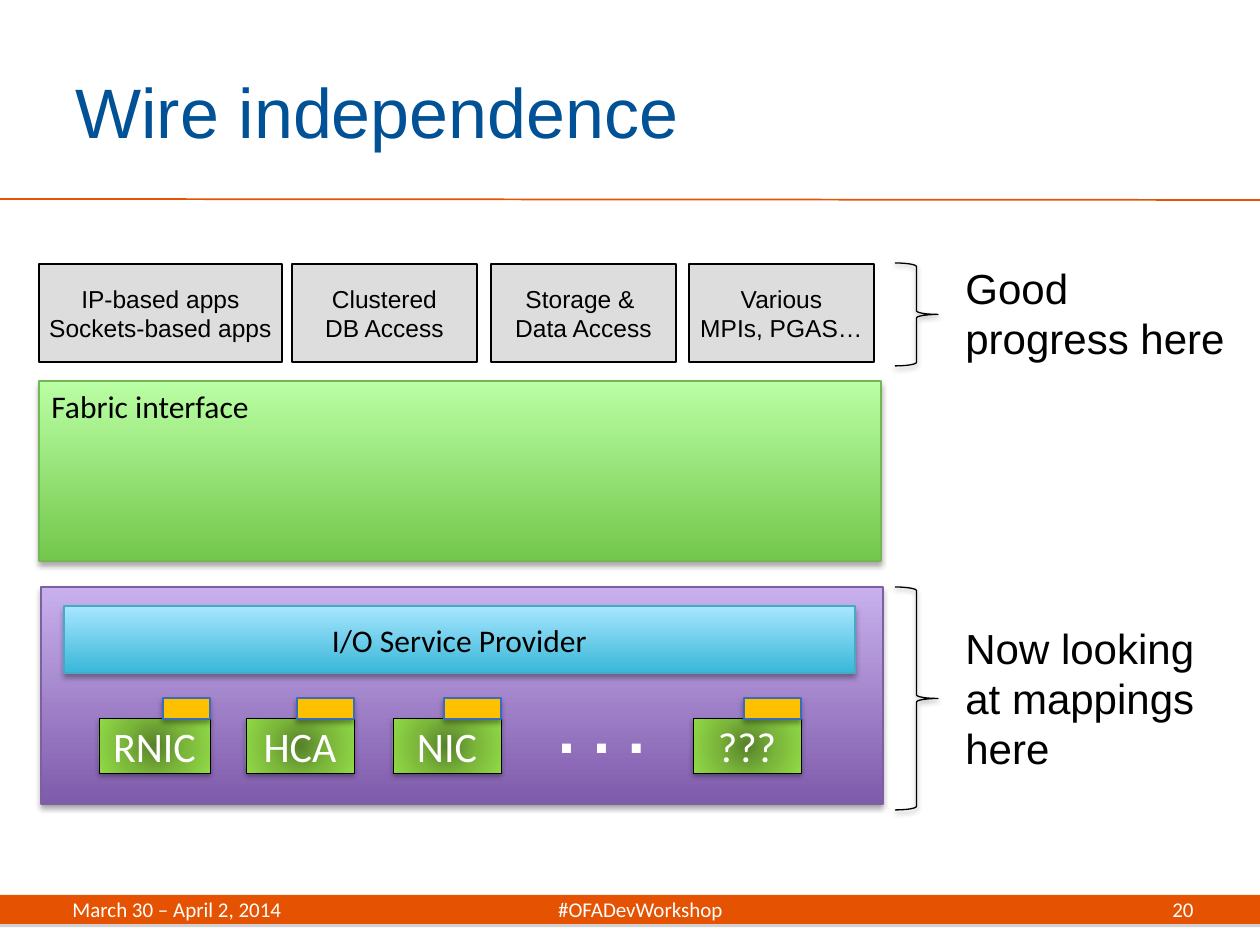
from dataclasses import dataclass

from lxml.etree import SubElement
from pptx import Presentation
from pptx.dml.color import RGBColor
from pptx.enum.shapes import MSO_CONNECTOR, MSO_SHAPE
from pptx.enum.text import MSO_ANCHOR, PP_ALIGN
from pptx.oxml.ns import qn
from pptx.util import Emu, Pt

PX_PER_INCH = 126


@dataclass(frozen=True)
class Theme:
    # Colours
    black: str = "000000"
    white: str = "FFFFFF"
    title: str = "005195"
    orange: str = "E55302"
    footer_shadow: str = "808080"
    app: str = "DDDDDD"
    port: str = "FFC000"
    port_line: str = "386CBC"
    fabric: tuple = ("73C74B", "BAFFA4")
    fabric_line: str = "75B755"
    provider: tuple = ("7F5BAB", "C8B0ED")
    provider_line: str = "7D60A0"
    service: tuple = ("39B7D8", "A7E6FF")
    service_line: str = "46AAC5"
    adapter: tuple = ("57812A", "7BB73B", "92DA46")
    # Fonts and type sizes
    heading_font: str = "Arial"
    label_font: str = "Calibri"
    title_size: int = 40
    dots_size: int = 36
    note_size: int = 24
    label_size: int = 18
    app_size: int = 14
    footer_size: int = 12


def px(value):
    return Emu(round(value * 914400 / PX_PER_INCH))


def rgb(value):
    return RGBColor.from_string(value)


def write_text(shape, text, *, size, color, font, bold=False, wrap=True,
               align=PP_ALIGN.LEFT, anchor=MSO_ANCHOR.TOP, center_tab=None):
    frame = shape.text_frame
    frame.word_wrap = wrap
    frame.vertical_anchor = anchor
    for index, line in enumerate(text.split("\n")):
        paragraph = frame.add_paragraph() if index else frame.paragraphs[0]
        paragraph.alignment = align
        if center_tab is not None:
            tabs = SubElement(paragraph._p.get_or_add_pPr(), qn("a:tabLst"))
            SubElement(tabs, qn("a:tab"), pos=str(px(center_tab)), algn="ctr")
        run = paragraph.add_run()
        run.text = line
        run.font.name = font
        run.font.size = Pt(size)
        run.font.bold = bold
        run.font.color.rgb = rgb(color)


def fill_gradient(shape, colors, radial):
    """Spread the colours evenly, from the bottom up or from the centre out."""
    shape.fill.gradient()
    gradient = shape.element.spPr.find(qn("a:gradFill"))
    for child in list(gradient):
        gradient.remove(child)
    stops = SubElement(gradient, qn("a:gsLst"))
    for index, color in enumerate(colors):
        position = 100000 * index // (len(colors) - 1)
        stop = SubElement(stops, qn("a:gs"), pos=str(position))
        SubElement(stop, qn("a:srgbClr"), val=color)
    if radial:
        direction = SubElement(gradient, qn("a:path"), path="circle")
        SubElement(direction, qn("a:fillToRect"), l="50000", t="50000", r="50000", b="50000")
    else:
        SubElement(gradient, qn("a:lin"), ang="16200000", scaled="0")


def add_shadow(shape, color, blur=3.1, distance=1.8, opacity=35):
    effects = shape.element.spPr.find(qn("a:effectLst"))
    shadow = SubElement(effects, qn("a:outerShdw"), blurRad=str(Pt(blur)),
                        dist=str(Pt(distance)), dir="5400000", rotWithShape="0")
    shade = SubElement(shadow, qn("a:srgbClr"), val=color)
    SubElement(shade, qn("a:alpha"), val=str(opacity * 1000))


class SlideBuilder:
    def __init__(self, slide, theme):
        self.slide = slide
        self.theme = theme

    def shape(self, left, top, width, height, *, fill=None, line=None, weight=0.75,
              radial=False, kind=MSO_SHAPE.RECTANGLE, parent=None):
        shapes = (parent or self.slide).shapes
        shape = shapes.add_shape(kind, px(left), px(top), px(width), px(height))
        shape.shadow.inherit = False
        if fill is None:
            shape.fill.background()
        elif isinstance(fill, tuple):
            fill_gradient(shape, fill, radial)
        else:
            shape.fill.solid()
            shape.fill.fore_color.rgb = rgb(fill)
        if line is None:
            shape.line.fill.background()
        else:
            shape.line.color.rgb = rgb(line)
            shape.line.width = Pt(weight)
        return shape

    def panel(self, *box, **style):
        shape = self.shape(*box, **style)
        add_shadow(shape, self.theme.black)
        return shape

    def text(self, text, left, top, width, height, **style):
        box = self.slide.shapes.add_textbox(px(left), px(top), px(width), px(height))
        write_text(box, text, **style)

    def rule(self, start_x, start_y, end_x, end_y):
        line = self.slide.shapes.add_connector(
            MSO_CONNECTOR.STRAIGHT, px(start_x), px(start_y), px(end_x), px(end_y))
        line.line.color.rgb = rgb(self.theme.orange)
        line.line.width = Pt(1)
        SubElement(line.element.spPr, qn("a:effectLst"))

    def app(self, text, left, width):
        box = self.shape(left, 264, width, 98, fill=self.theme.app, line=self.theme.black)
        write_text(box, text, size=self.theme.app_size, color=self.theme.black,
                   font=self.theme.heading_font, wrap=False,
                   align=PP_ALIGN.CENTER, anchor=MSO_ANCHOR.MIDDLE)

    def brace_note(self, text, brace_top, brace_height, text_top, text_height):
        brace = self.shape(895, brace_top, 43, brace_height, line=self.theme.black,
                           kind=MSO_SHAPE.RIGHT_BRACE)
        add_shadow(brace, self.theme.black, distance=1.6, opacity=38)
        self.text(text, 953, text_top, 286, text_height, size=self.theme.note_size,
                  color=self.theme.black, font=self.theme.heading_font)

    def adapter(self, text, left, width, port_width):
        group = self.slide.shapes.add_group_shape()
        card = self.panel(left, 718, width, 55, fill=self.theme.adapter, radial=True,
                          line=self.theme.black, weight=0.25, parent=group)
        write_text(card, text, size=self.theme.note_size, color=self.theme.white,
                   font=self.theme.label_font, align=PP_ALIGN.CENTER,
                   anchor=MSO_ANCHOR.MIDDLE)
        self.panel(left + width - port_width, 698, port_width, 21, fill=self.theme.port,
                   line=self.theme.port_line, parent=group)


def main():
    presentation = Presentation()
    presentation.slide_width = px(1260)
    presentation.slide_height = px(945)
    theme = Theme()
    builder = SlideBuilder(presentation.slides.add_slide(presentation.slide_layouts[6]), theme)

    # Footer bar, title and rule
    footer = builder.shape(0, 895, 1260, 29, fill=theme.orange)
    add_shadow(footer, theme.footer_shadow, blur=0)
    builder.rule(0, 199, 1260, 200)
    builder.text("Wire independence", 63, 32, 1029, 157, size=theme.title_size,
                 color=theme.title, font=theme.heading_font, anchor=MSO_ANCHOR.MIDDLE)

    # Applications
    for text, left, width in (("IP-based apps\nSockets-based apps", 39, 243),
                              ("Clustered\nDB Access", 292, 185),
                              ("Storage & \nData Access", 491, 185),
                              ("Various\nMPIs, PGAS…", 689, 185)):
        builder.app(text, left, width)

    # Fabric interface
    label = dict(size=theme.label_size, color=theme.black, font=theme.label_font)
    fabric = builder.panel(39, 381, 842, 180, fill=theme.fabric, line=theme.fabric_line)
    write_text(fabric, "Fabric interface", **label)

    # Progress notes
    builder.brace_note("Good progress here", 263, 103, 256, 115)
    builder.brace_note("Now looking at mappings here", 587, 223, 616, 165)

    # Service provider and its adapters
    builder.panel(41, 587, 842, 217, fill=theme.provider, line=theme.provider_line)
    for text, left, width, port_width in (("RNIC", 99, 111, 47), ("HCA", 246, 108, 57),
                                          ("NIC", 393, 108, 57), ("???", 693, 108, 57)):
        builder.adapter(text, left, width, port_width)
    service = builder.panel(64, 606, 791, 67, fill=theme.service, line=theme.service_line)
    write_text(service, "I/O Service Provider", align=PP_ALIGN.CENTER,
               anchor=MSO_ANCHOR.MIDDLE, **label)
    builder.text(" . . .", 528, 684, 131, 89, size=theme.dots_size, color=theme.white,
                 font=theme.heading_font, bold=True, wrap=False)

    # Footer text
    footer_style = dict(size=theme.footer_size, color=theme.white, font=theme.label_font,
                        anchor=MSO_ANCHOR.MIDDLE)
    builder.text("20", 1056, 895, 150, 29, align=PP_ALIGN.RIGHT, **footer_style)
    builder.text("March 30 – April 2, 2014\t#OFADevWorkshop", 60, 895, 1140, 29,
                 center_tab=568, **footer_style)

    presentation.save("out.pptx")


if __name__ == "__main__":
    main()
